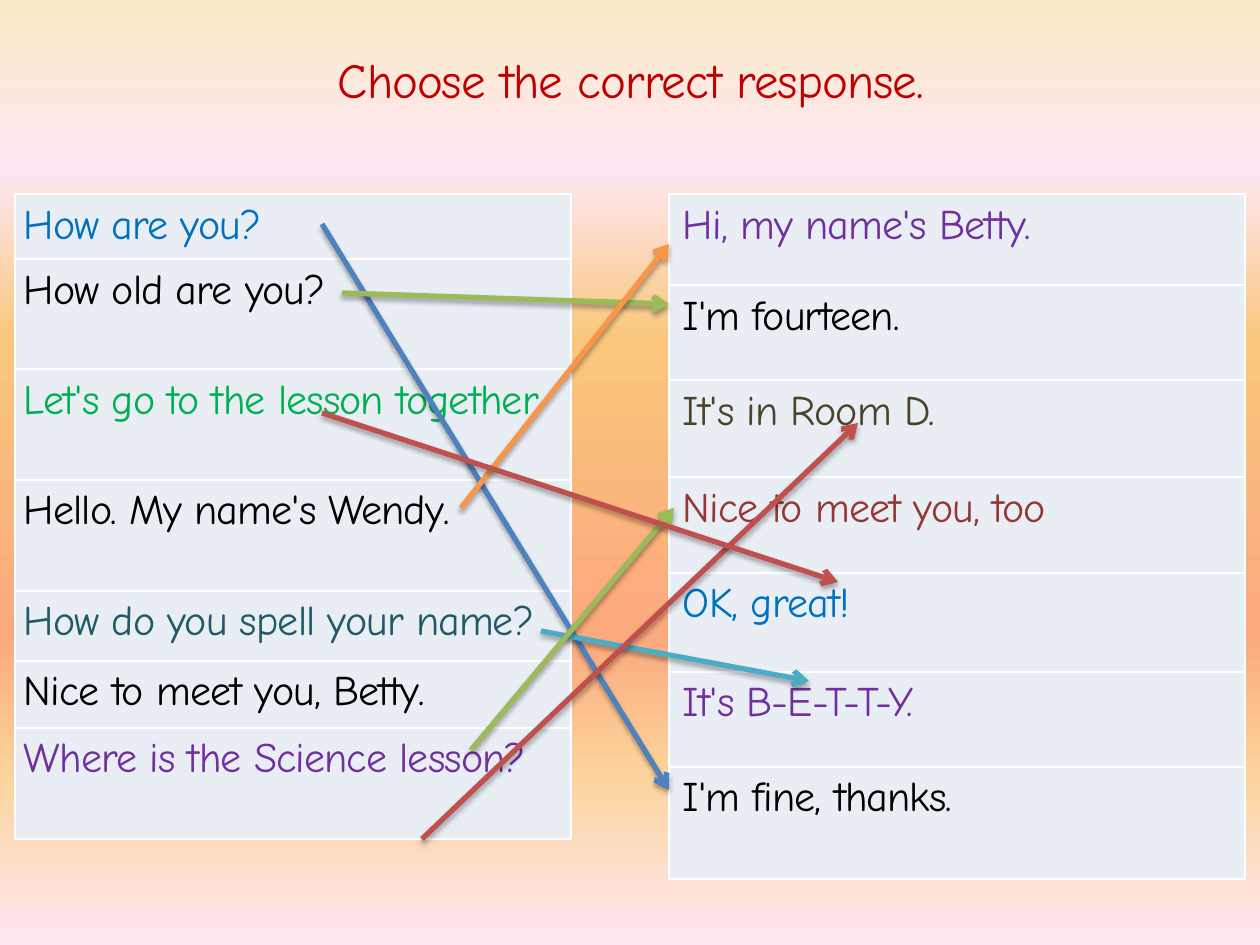
from lxml.etree import SubElement
from pptx import Presentation
from pptx.dml.color import RGBColor
from pptx.enum.shapes import MSO_CONNECTOR
from pptx.enum.text import MSO_ANCHOR, PP_ALIGN
from pptx.oxml import parse_xml
from pptx.oxml.ns import nsdecls, qn
from pptx.util import Pt

SCALE = 914400 / 126  # EMU per px
FONT = "Comic Neue"
SKY = [(0, "FBEAC7"), (18, "FEE7F2"), (36, "FAC77D"),
       (67, "FBA97D"), (82, "FBD49C"), (100, "FEE7F2")]

ASKS = [  # text, colour, row height
    ("How are you?", "0070C0", 65),
    ("How old are you?", "000000", 110),
    ("Let's go to the lesson together.", "00B050", 111),
    ("Hello. My name's Wendy.", "000000", 111),
    ("How do you spell your name?", "215968", 70),
    ("Nice to meet you, Betty.", "000000", 67),
    ("Where is the Science lesson?", "7030A0", 111),
]
REPLIES = [
    ("Hi, my name's Betty.", "7030A0", 91),
    ("I'm fourteen.", "000000", 95),
    ("It's in Room D.", "4A452A", 97),
    ("Nice to meet you, too", "953735", 96),
    ("OK, great!", "0070C0", 99),
    ("It's B-E-T-T-Y.", "7030A0", 95),
    ("I'm fine, thanks.", "000000", 112),
]
LINKS = [  # from, to, colour
    ((322, 224), (669, 790), "4F81BD"),
    ((342, 293), (669, 304), "9BBB59"),
    ((461, 508), (669, 244), "F79646"),
    ((541, 631), (809, 681), "4BACC6"),
    ((471, 750), (674, 508), "9BBB59"),
    ((422, 839), (858, 423), "C0504D"),
    ((322, 413), (838, 582), "C0504D"),
]


def px(n):
    return round(n * SCALE)


def paint(code):
    return RGBColor.from_string(code)


def write(para, text, size, color):
    """Put one line of text in a paragraph."""
    para.text = text
    font = para.font
    font.name, font.size = FONT, Pt(size)
    font.color.rgb = paint(color)
    para.runs[0].font._element.set("spc", "-50")


def backdrop(slide):
    """Fill the slide with a vertical gradient."""
    fill = slide.background.fill
    fill.gradient()
    fill.gradient_angle = 270
    stops = slide.background._cSld.find(".//" + qn("a:gsLst"))
    for stop in list(stops):
        stops.remove(stop)
    for pos, color in SKY:
        stop = SubElement(stops, qn("a:gs"), pos=str(pos * 1000))
        SubElement(stop, qn("a:srgbClr"), val=color)


def title(slide, x, y, w, h):
    frame = slide.shapes.add_textbox(px(x), px(y), px(w), px(h)).text_frame
    frame.word_wrap = True
    frame.vertical_anchor = MSO_ANCHOR.MIDDLE
    para = frame.paragraphs[0]
    para.alignment = PP_ALIGN.CENTER
    write(para, "Choose the correct response.", 28, "C00000")


def edge(cell):
    """Draw thin white borders round a cell."""
    props = cell._tc.get_or_add_tcPr()
    for i, side in enumerate("LRTB"):
        props.insert(i, parse_xml(
            f'<a:ln{side} {nsdecls("a")} w="12700"><a:solidFill>'
            f'<a:srgbClr val="FFFFFF"/></a:solidFill></a:ln{side}>'))


def column(slide, x, y, w, rows, inset):
    """One table of phrases, a row for each."""
    high = sum(row[2] for row in rows)
    grid = slide.shapes.add_table(
        len(rows), 1, px(x), px(y), px(w), px(high)).table
    grid.first_row = grid.horz_banding = False
    for i, (text, color, tall) in enumerate(rows):
        grid.rows[i].height = px(tall)
        cell = grid.cell(i, 0)
        cell.margin_left = px(inset)
        cell.margin_right = cell.margin_top = cell.margin_bottom = 0
        cell.fill.solid()
        cell.fill.fore_color.rgb = paint("E9EDF4")
        edge(cell)
        para = cell.text_frame.paragraphs[0]
        para.line_spacing = 1.15
        write(para, text, 24, color)


def arrow(slide, start, end, color):
    """A line with an open head and a soft shadow."""
    link = slide.shapes.add_connector(
        MSO_CONNECTOR.STRAIGHT, *map(px, start + end))
    link.line.width = Pt(3)
    link.line.color.rgb = paint(color)
    SubElement(link.line._get_or_add_ln(), qn("a:tailEnd"), type="arrow")
    link._element.spPr.append(parse_xml(
        f'<a:effectLst {nsdecls("a")}><a:outerShdw blurRad="39400" '
        'dist="23000" dir="5400000" rotWithShape="0"><a:srgbClr val="000000">'
        '<a:alpha val="35000"/></a:srgbClr></a:outerShdw></a:effectLst>'))


def main():
    deck = Presentation()
    deck.slide_width, deck.slide_height = px(1260), px(945)
    slide = deck.slides.add_slide(deck.slide_layouts[6])
    backdrop(slide)
    title(slide, 64, 0, 1134, 158)
    column(slide, 15, 194, 556, ASKS, 9)
    column(slide, 669, 194, 576, REPLIES, 14)
    for link in LINKS:
        arrow(slide, *link)
    deck.save("out.pptx")


if __name__ == "__main__":
    main()
